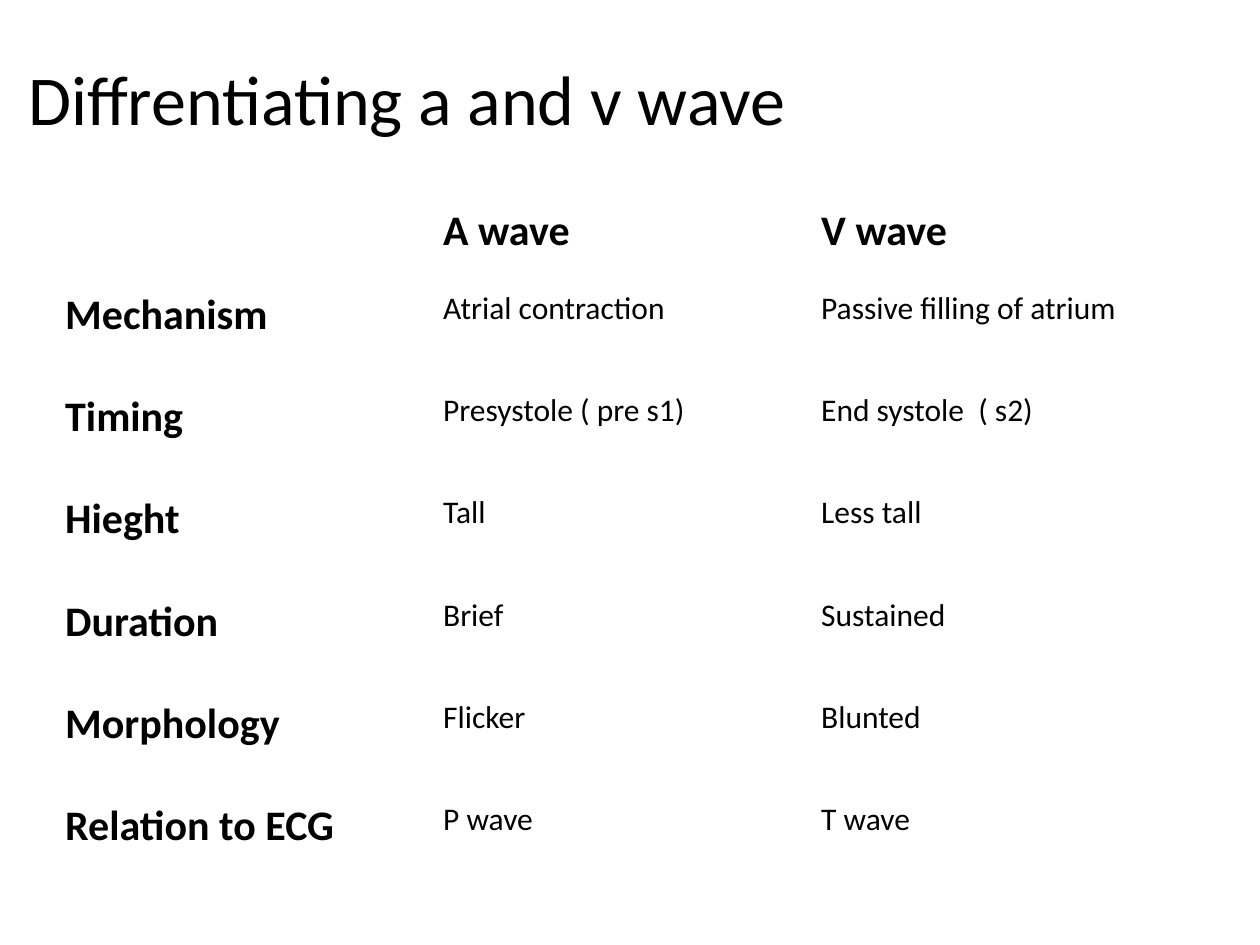
import pptx
import pptx.dml.color
import pptx.enum.text
import pptx.util

Cm = pptx.util.Cm
BLACK = pptx.dml.color.RGBColor(0, 0, 0)
CENTER = pptx.enum.text.PP_ALIGN.CENTER
LEFT = pptx.enum.text.PP_ALIGN.LEFT
MIDDLE = pptx.enum.text.MSO_ANCHOR.MIDDLE

WAVE_ROWS = [
    ("", "A wave", "V wave"),
    ("Mechanism", "Atrial contraction", "Passive filling of atrium"),
    ("Timing", "Presystole ( pre s1)", "End systole  ( s2)"),
    ("Hieght", "Tall", "Less tall"),
    ("Duration", "Brief", "Sustained"),
    ("Morphology", "Flicker", "Blunted"),
    ("Relation to ECG", "P wave", "T wave"),
]


def write_text(frame, text, *, size, font="Calibri", bold=False, color=BLACK, align=LEFT):
    paragraph = frame.paragraphs[0]
    paragraph.text = text
    paragraph.alignment = align
    paragraph.font.name = font
    paragraph.font.size = pptx.util.Pt(size)
    paragraph.font.bold = bold
    paragraph.font.color.rgb = color


class WaveSlide:
    """Holds the text style and the slide that receives the elements."""

    title_size = 40
    header_size = 24
    body_size = 18

    def __init__(self, slide):
        self.slide = slide

    def add_title(self, text, left, top, width, height):
        frame = self.slide.shapes.add_textbox(left, top, width, height).text_frame
        frame.word_wrap = True
        frame.vertical_anchor = MIDDLE
        write_text(frame, text, size=self.title_size, align=CENTER)

    def add_table(self, rows, left, top, column_width, header_height, row_height):
        column_count = len(rows[0])
        height = header_height + row_height * (len(rows) - 1)
        table = self.slide.shapes.add_table(
            len(rows), column_count, left, top, column_width * column_count, height
        ).table
        for row_index, texts in enumerate(rows):
            table.rows[row_index].height = row_height if row_index else header_height
            for column_index, text in enumerate(texts):
                cell = table.cell(row_index, column_index)
                cell.fill.background()
                is_header = row_index == 0 or column_index == 0
                size = self.header_size if is_header else self.body_size
                write_text(cell.text_frame, text, size=size, bold=is_header)


def main():
    presentation = pptx.Presentation()
    presentation.slide_width = Cm(25.4)
    presentation.slide_height = Cm(19.05)
    slide = presentation.slides.add_slide(presentation.slide_layouts[6])
    wave_slide = WaveSlide(slide)
    wave_slide.add_title("Diffrentiating a and v wave ", Cm(-6.78), Cm(0.76), Cm(30.28), Cm(2.41))
    wave_slide.add_table(WAVE_ROWS, Cm(1.06), Cm(4.02), Cm(7.62), Cm(1.69), Cm(2.06))
    presentation.save("out.pptx")


if __name__ == "__main__":
    main()
